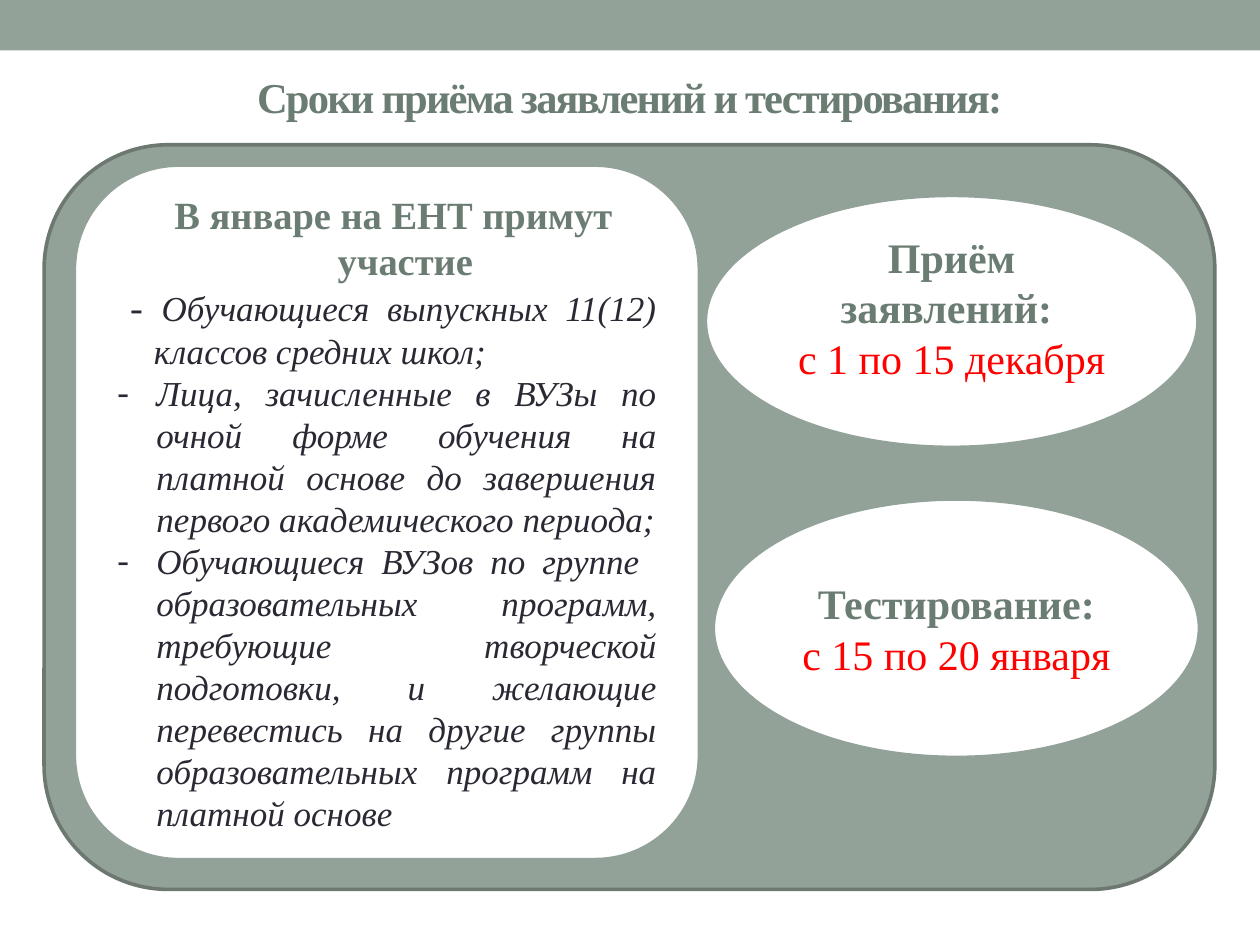
from dataclasses import dataclass
from typing import Optional

from lxml import etree
from pptx import Presentation
from pptx.dml.color import RGBColor
from pptx.enum.shapes import MSO_SHAPE
from pptx.enum.text import MSO_ANCHOR, PP_ALIGN
from pptx.oxml.ns import qn
from pptx.util import Cm, Pt

RECTANGLE, ROUNDED, OVAL = MSO_SHAPE.RECTANGLE, MSO_SHAPE.ROUNDED_RECTANGLE, MSO_SHAPE.OVAL
CENTER, JUSTIFY = PP_ALIGN.CENTER, PP_ALIGN.JUSTIFY
MIDDLE = MSO_ANCHOR.MIDDLE
BLANK_LAYOUT = 6


@dataclass(frozen=True)
class Theme:
    font: str = "Times New Roman"
    sage: str = "93A299"
    outline: str = "6D7871"
    heading: str = "6B7D72"
    ink: str = "292934"
    date: str = "FF0000"
    white: str = "FFFFFF"
    title_size: float = 24.3
    oval_size: float = 24
    panel_heading_size: float = 22
    body_size: float = 20
    line_width: float = 2.08


THEME = Theme()


@dataclass(frozen=True)
class Frame:
    left: float
    top: float
    width: float
    height: float

    def lengths(self) -> tuple:
        return tuple(Cm(value) for value in (self.left, self.top, self.width, self.height))


@dataclass(frozen=True)
class Span:
    text: str
    size: float
    color: str
    bold: bool = False
    italic: bool = False
    spacing: float = 0


@dataclass(frozen=True)
class Para:
    spans: tuple
    align: int = CENTER
    margin: float = 0
    indent: float = 0
    bullet: Optional[str] = None


def add_panel(slide, kind: int, frame: Frame, fill: str, line: Optional[str] = None):
    panel = slide.shapes.add_shape(kind, *frame.lengths())
    panel.shadow.inherit = False
    panel.fill.solid()
    panel.fill.fore_color.rgb = RGBColor.from_string(fill)
    if line is None:
        panel.line.fill.background()
    else:
        panel.line.color.rgb = RGBColor.from_string(line)
        panel.line.width = Pt(THEME.line_width)
    return panel


def add_span(paragraph, span: Span) -> None:
    run = paragraph.add_run()
    run.text = span.text
    formats = {
        "name": THEME.font,
        "size": Pt(span.size),
        "bold": span.bold,
        "italic": span.italic,
    }
    for attribute, value in formats.items():
        setattr(run.font, attribute, value)
    run.font.color.rgb = RGBColor.from_string(span.color)
    if span.spacing:
        run.font._element.set("spc", str(round(span.spacing * 100)))


def write_paras(box, paras: tuple) -> None:
    frame = box.text_frame
    frame.word_wrap = True
    frame.vertical_anchor = MIDDLE
    for index, para in enumerate(paras):
        paragraph = frame.add_paragraph() if index else frame.paragraphs[0]
        paragraph.alignment = para.align
        properties = paragraph._p.get_or_add_pPr()
        if para.margin:
            properties.set("marL", str(Cm(para.margin)))
            properties.set("indent", str(Cm(para.indent)))
        if para.bullet:
            etree.SubElement(properties, qn("a:buFont"), typeface=THEME.font)
            etree.SubElement(properties, qn("a:buChar"), char=para.bullet)
        for span in para.spans:
            add_span(paragraph, span)


def add_date_oval(slide, frame: Frame, label: str, date: str):
    oval = add_panel(slide, OVAL, frame, THEME.white, THEME.sage)
    write_paras(oval, (
        Para((Span(label, THEME.oval_size, THEME.heading, bold=True),)),
        Para((Span(date, THEME.oval_size, THEME.date),)),
    ))
    return oval


def body_span(text: str) -> Span:
    return Span(text, THEME.body_size, THEME.ink, italic=True)


def bullet_para(text: str) -> Para:
    return Para((body_span(text),), JUSTIFY, margin=0.79, indent=-0.79, bullet="-")


def add_participants(slide) -> None:
    panel = add_panel(slide, ROUNDED, Frame(1.5, 3.33, 12.6, 14), THEME.white, THEME.sage)
    size = THEME.panel_heading_size
    write_paras(panel, (
        Para((Span("В январе на ЕНТ примут участие", size, THEME.heading, bold=True),),
             margin=0.74, indent=-0.48),
        Para((Span("- ", size, THEME.ink),
              body_span("Обучающиеся выпускных 11(12) классов средних школ;")),
             JUSTIFY, margin=0.74, indent=-0.48),
        bullet_para("Лица, зачисленные в ВУЗы по очной форме обучения на платной основе "
                    "до завершения первого академического периода;"),
        bullet_para("Обучающиеся ВУЗов по группе  образовательных программ, требующие "
                    "творческой подготовки, и желающие перевестись на другие группы "
                    "образовательных программ на платной основе"),
    ))


def main() -> None:
    deck = Presentation()
    deck.slide_width, deck.slide_height = Cm(25.4), Cm(19.05)
    slide = deck.slides.add_slide(deck.slide_layouts[BLANK_LAYOUT])

    add_panel(slide, RECTANGLE, Frame(0, 0, 25.4, 1.02), THEME.sage)
    title = slide.shapes.add_textbox(*Frame(1.27, 1.12, 22.86, 1.67).lengths())
    write_paras(title, (
        Para((Span("Сроки приёма заявлений и тестирования:", THEME.title_size,
                   THEME.heading, bold=True, spacing=-1),)),
    ))

    add_panel(slide, ROUNDED, Frame(0.89, 2.92, 23.6, 15.01), THEME.sage, THEME.outline)
    add_participants(slide)
    add_date_oval(slide, Frame(14.38, 10.06, 9.8, 5.21), "Тестирование:", "с 15 по 20 января")
    application = add_date_oval(slide, Frame(14.22, 3.94, 9.93, 5.08),
                                "Приём заявлений: ", "с 1 по 15 декабря")
    application.text_frame.margin_bottom = Cm(0.7)

    deck.save("out.pptx")


if __name__ == "__main__":
    main()
